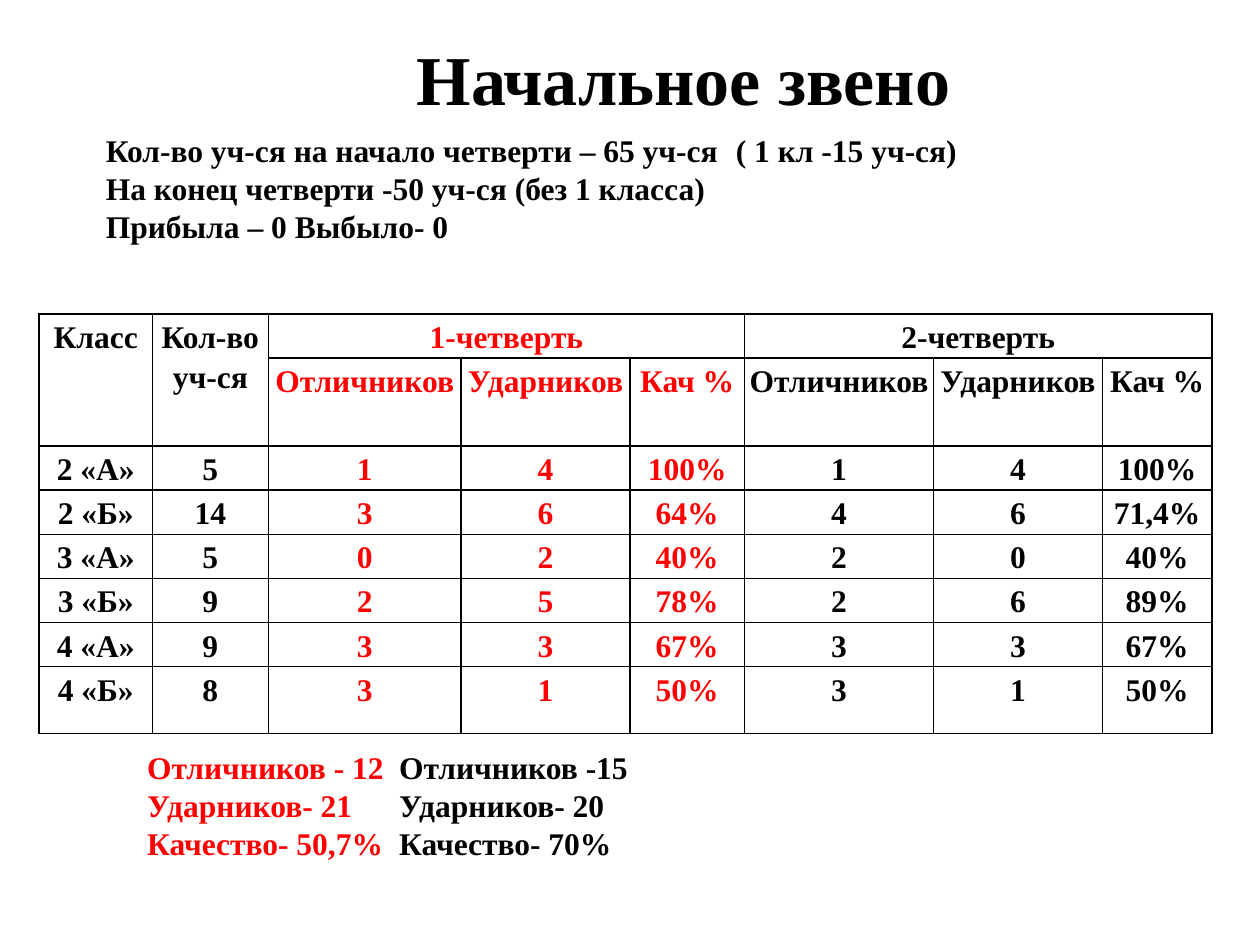
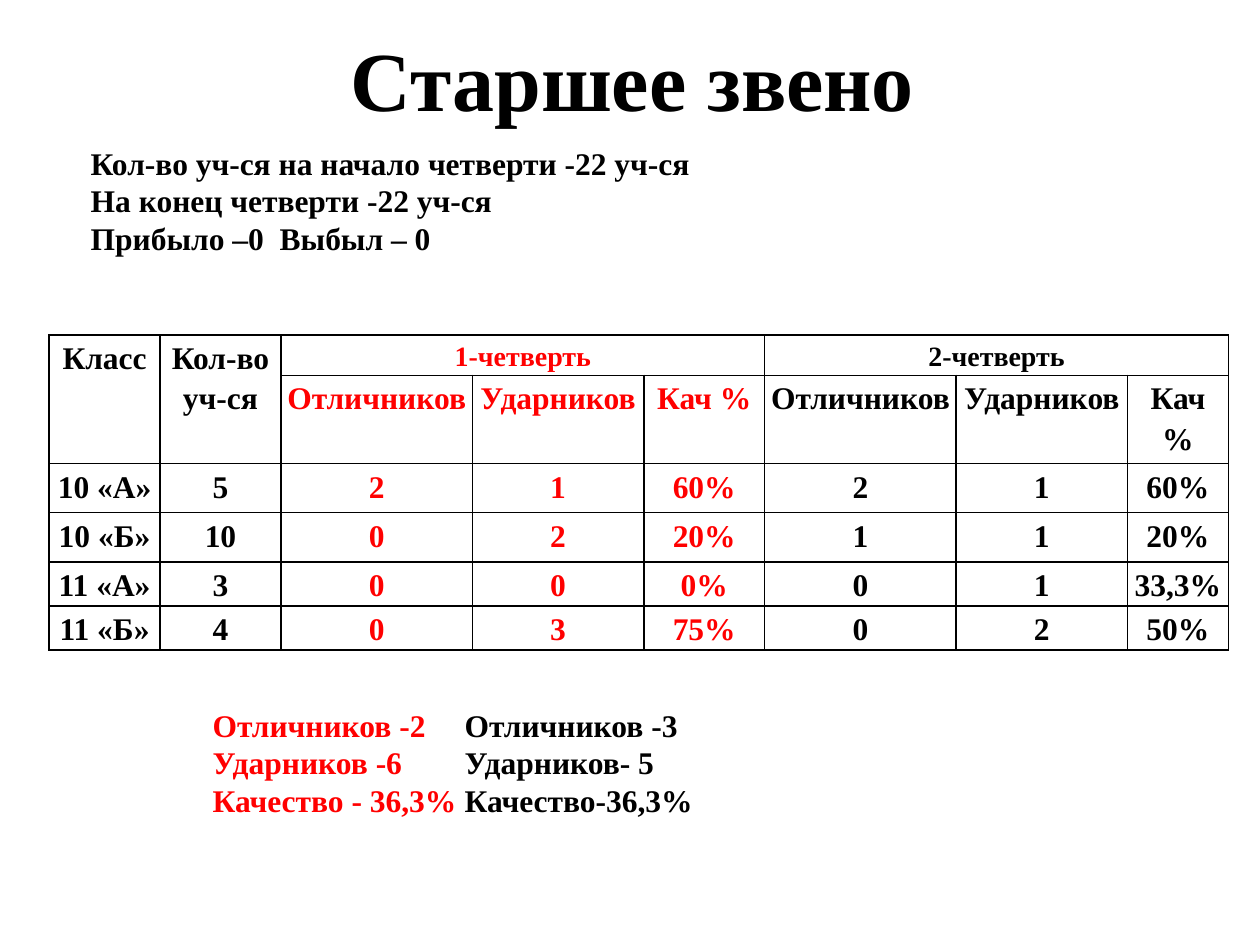
"""Build two slides of quarterly school results, one for each school stage."""
from dataclasses import dataclass

import pptx
import pptx.dml.color
import pptx.enum.text
import pptx.oxml.ns
import pptx.util
from lxml import etree

Inches = pptx.util.Inches
Pt = pptx.util.Pt
ALIGN = pptx.enum.text.PP_ALIGN
ANCHOR = pptx.enum.text.MSO_ANCHOR


@dataclass(frozen=True)
class Theme:
    font: str = "Times New Roman"
    ink: str = "000000"
    first_quarter: str = "FF0000"
    text_size: int = 18
    cell_spacing: float = 1.15
    border: float = 1


THEME = Theme()
QUARTERS = ("1-четверть", "2-четверть")
FIRST_QUARTER_COLUMNS = range(2, 5)

STAGES = [
    {
        "title": "Начальное звено", "title_size": 40, "title_at": (1.56, 0.23, 7.73, 0.77),
        "intro_at": (0.74, 0.99, 8.67, 1.31),
        "intro": [
            [(0, "Кол-во уч-ся на начало четверти – 65 уч-ся"), (5.79, "( 1 кл -15 уч-ся)")],
            [(0, "На конец четверти -50 уч-ся (без 1 класса)")],
            [(0, "Прибыла – 0"), (2.56, "Выбыло- 0")],
        ],
        "table_at": (0.31, 2.49), "cell_margin": 0.02, "quarter_size": 18,
        "columns": (0.9, 0.92, 1.53, 1.34, 0.91, 1.5, 1.34, 0.87),
        "rows": (0.35, 0.7, 0.35, 0.35, 0.35, 0.35, 0.35, 0.53),
        "last_heading": "Кач %",
        "classes": [
            ("2 «А»", "5", "1", "4", "100%", "1", "4", "100%"),
            ("2 «Б»", "14", "3", "6", "64%", "4", "6", "71,4%"),
            ("3 «А»", "5", "0", "2", "40%", "2", "0", "40%"),
            ("3 «Б»", "9", "2", "5", "78%", "2", "6", "89%"),
            ("4 «А»", "9", "3", "3", "67%", "3", "3", "67%"),
            ("4 «Б»", "8", "3", "1", "50%", "3", "1", "50%"),
        ],
        "totals_at": (0.57, 5.89, 9.06, 1.31),
        "totals": [
            [(1.38, "Отличников - 12"), (5.44, "Отличников -15")],
            [(1.44, "Ударников- 21"), (5.44, "Ударников- 20")],
            [(1.5, "Качество- 50,7%"), (5.62, "Качество- 70%")],
        ],
    },
    {
        "title": "Старшее звено", "title_size": 48, "title_at": (2.66, 0.16, 4.72, 0.91),
        "intro_at": (0.62, 1.09, 7.89, 1.31),
        "intro": [
            [(0, "Кол-во уч-ся на начало четверти -22 уч-ся")],
            [(0, "На конец четверти -22 уч-ся")],
            [(0, "Прибыло –0"), (4.13, "Выбыл – 0")],
        ],
        "table_at": (0.39, 2.66), "cell_margin": 0.03, "quarter_size": 16,
        "columns": (0.88, 0.96, 1.52, 1.36, 0.96, 1.52, 1.36, 0.8),
        "rows": (0.32, 0.7, 0.39, 0.39, 0.35, 0.35),
        "last_heading": "Кач\v%",
        "classes": [
            ("10 «А»", "5", "2", "1", "60%", "2", "1", "60%"),
            ("10 «Б»", "10", "0", "2", "20%", "1", "1", "20%"),
            ("11 «А»", "3", "0", "0", "0%", "0", "1", "33,3%"),
            ("11 «Б»", "4", "0", "3", "75%", "0", "2", "50%"),
        ],
        "totals_at": (1.09, 5.55, 8.44, 1.31),
        "totals": [
            [(1.07, "Отличников -2"), (5.13, "Отличников -3")],
            [(1.07, "Ударников -6"), (5.13, "Ударников- 5")],
            [(1.07, "Качество - 36,3%"), (5.31, "Качество-36,3%")],
        ],
    },
]


def add_xml(parent, tag, **attributes):
    values = {name: str(value) for name, value in attributes.items()}
    return etree.SubElement(parent, pptx.oxml.ns.qn(tag), values)


def place(shape, box):
    shape.left, shape.top, shape.width, shape.height = map(Inches, box)


def set_color(font, color):
    font.color.rgb = pptx.dml.color.RGBColor.from_string(color)


def style(paragraph, size=THEME.text_size, color=THEME.ink):
    font = paragraph.font
    font.name, font.size, font.bold = THEME.font, Pt(size), True
    set_color(font, color)


def write_lines(shape, lines, colors):
    """Write each line as parts that start at tab stops, coloured in turn."""
    frame = shape.text_frame
    frame.word_wrap = True
    frame.auto_size = pptx.enum.text.MSO_AUTO_SIZE.NONE
    frame.vertical_anchor = ANCHOR.TOP
    for number, parts in enumerate(lines):
        paragraph = frame.add_paragraph() if number else frame.paragraphs[0]
        paragraph.space_before = Pt(0)
        properties = paragraph._p.get_or_add_pPr()
        properties.set("marL", "0")
        properties.set("indent", "0")
        add_xml(properties, "a:buNone")
        stops = [position for position, text in parts if position]
        if stops:
            tabs = add_xml(properties, "a:tabLst")
            for stop in stops:
                add_xml(tabs, "a:tab", pos=Inches(stop), algn="l")
        style(paragraph)
        for (position, text), color in zip(parts, colors):
            run = paragraph.add_run()
            run.text = "\t" + text if position else text
            if color != THEME.ink:
                set_color(run.font, color)


def format_cell(cell, text, margin, size, color):
    cell.margin_left = cell.margin_right = Inches(margin)
    cell.margin_top, cell.margin_bottom = Inches(0.01), 0
    cell.text = text
    for paragraph in cell.text_frame.paragraphs:
        paragraph.alignment = ALIGN.CENTER
        paragraph.line_spacing = THEME.cell_spacing
        style(paragraph, size, color)
    properties = cell._tc.get_or_add_tcPr()
    for side in ("a:lnL", "a:lnR", "a:lnT", "a:lnB"):
        line = add_xml(properties, side, w=Pt(THEME.border))
        add_xml(add_xml(line, "a:solidFill"), "a:srgbClr", val=THEME.ink)
    cell.fill.background()


def add_results(slide, stage):
    columns, rows = stage["columns"], stage["rows"]
    first, second = QUARTERS
    marks = ["Отличников", "Ударников"]
    content = [
        ("Класс", "Кол-во\nуч-ся", first, "", "", second, "", ""),
        ("", "", *marks, "Кач %", *marks, stage["last_heading"]),
        *stage["classes"],
    ]
    frame = slide.shapes.add_table(
        len(rows), len(columns), *map(Inches, (*stage["table_at"], sum(columns), sum(rows))))
    table = frame.table
    table.first_row = table.horz_banding = False
    for column, width in zip(table.columns, columns):
        column.width = Inches(width)
    for row, height in zip(table.rows, rows):
        row.height = Inches(height)
    for r, texts in enumerate(content):
        for c, text in enumerate(texts):
            size = stage["quarter_size"] if r == 0 and c > 1 else THEME.text_size
            color = THEME.first_quarter if c in FIRST_QUARTER_COLUMNS else THEME.ink
            format_cell(table.cell(r, c), text, stage["cell_margin"], size, color)
    for c in (0, 1):
        table.cell(0, c).merge(table.cell(1, c))
    for c in (2, 5):
        table.cell(0, c).merge(table.cell(0, c + 2))


def add_stage(deck, stage):
    slide = deck.slides.add_slide(deck.slide_layouts[1])
    title, intro = slide.placeholders
    place(title, stage["title_at"])
    title.text_frame.text = stage["title"]
    title.text_frame.vertical_anchor = ANCHOR.MIDDLE
    title.text_frame.paragraphs[0].alignment = ALIGN.CENTER
    style(title.text_frame.paragraphs[0], stage["title_size"])
    place(intro, stage["intro_at"])
    write_lines(intro, stage["intro"], (THEME.ink, THEME.ink))
    add_results(slide, stage)
    totals = slide.shapes.add_textbox(*map(Inches, stage["totals_at"]))
    write_lines(totals, stage["totals"], (THEME.first_quarter, THEME.ink))


def main():
    deck = pptx.Presentation()
    deck.slide_width, deck.slide_height = Inches(10), Inches(7.5)
    for stage in STAGES:
        add_stage(deck, stage)
    deck.save("out.pptx")


if __name__ == "__main__":
    main()
